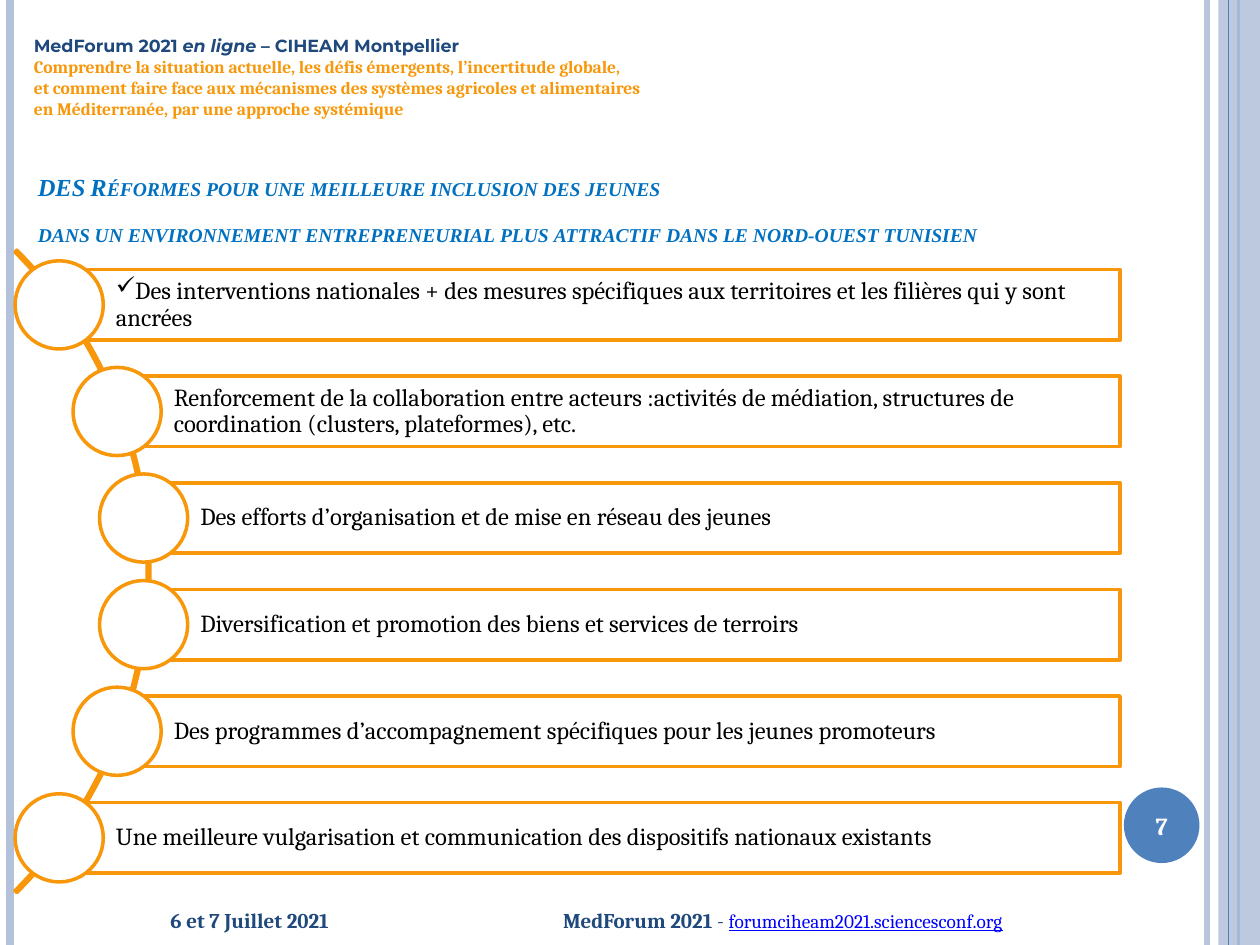
"""Build the MedForum 2021 slide on reforms for the inclusion of young people."""
from dataclasses import dataclass
from typing import Optional

from lxml import etree
from pptx import Presentation
from pptx.dml.color import RGBColor
from pptx.enum import shapes, text
from pptx.oxml.ns import qn
from pptx.util import Inches, Pt

COLORS = {
    "rail": "B3C1DB", "pale_rail": "B8C5DD", "blue": "4F81BD", "navy": "1F497D",
    "orange": "F79709", "title": "0070C0", "link": "0000FF",
    "white": "FFFFFF", "black": "000000",
}
SHAPE = shapes.MSO_SHAPE
MIDDLE = text.MSO_ANCHOR.MIDDLE
FIRST_TOP, PITCH = 2.14, 0.846
BAR_RIGHT, BAR_HEIGHT, NODE_SIZE = 8.89, 0.56, 0.7


@dataclass
class Rail:
    x: float
    color: str
    width: float


@dataclass
class Reform:
    node_left: float
    wording: str
    bullet: Optional[str] = None


RAILS_BELOW = [Rail(9.58, "pale_rail", 3), Rail(0.08, "rail", 4.5), Rail(9.83, "blue", 1.5)]
RAIL_ABOVE = Rail(9.75, "blue", 0.75)
REFORMS = [
    Reform(0.12, "Des interventions nationales + des mesures spécifiques aux territoires "
                 "et les filières qui y sont ancrées", "✓"),
    Reform(0.58, "Renforcement de la collaboration entre acteurs :activités de médiation, "
                 "structures de coordination (clusters, plateformes), etc."),
    Reform(0.79, "Des efforts d’organisation et de mise en réseau des jeunes"),
    Reform(0.79, "Diversification et promotion des biens et services de terroirs"),
    Reform(0.58, "Des programmes d’accompagnement spécifiques pour les jeunes promoteurs"),
    Reform(0.12, "Une meilleure vulgarisation et communication des dispositifs nationaux existants"),
]
TITLE_LINES = [
    "DES Réformes pour une meilleure inclusion des jeunes",
    "dans un environnement entrepreneurial plus attractif dans le nord-ouest tunisien",
]
THEME = ("Comprendre la situation actuelle, les défis émergents, l’incertitude globale,\v"
         "et comment faire face aux mécanismes des systèmes agricoles et alimentaires\v"
         "en Méditerranée, par une approche systémique")


def rgb(name: str) -> RGBColor:
    return RGBColor.from_string(COLORS[name])


def set_font(font, size: float, color: str, face: str = "Cambria", bold: bool = False) -> None:
    font.size, font.name, font.bold = Pt(size), face, bold
    font.color.rgb = rgb(color)


def add_rail(slide, rail: Rail) -> None:
    line = slide.shapes.add_connector(
        shapes.MSO_CONNECTOR.STRAIGHT, Inches(rail.x), 0, Inches(rail.x), Inches(7.5))
    line.line.color.rgb = rgb(rail.color)
    line.line.width = Pt(rail.width)
    etree.SubElement(line._element.spPr, qn("a:effectLst"))


def add_figure(slide, kind, left: float, top: float, width: float, height: float,
               fill: Optional[str] = None, outline: Optional[str] = None):
    figure = slide.shapes.add_shape(
        kind, Inches(left), Inches(top), Inches(width), Inches(height))
    figure.shadow.inherit = False
    if fill:
        figure.fill.solid()
        figure.fill.fore_color.rgb = rgb(fill)
    else:
        figure.fill.background()
    if outline:
        figure.line.color.rgb = rgb(outline)
        figure.line.width = Pt(2)
    else:
        figure.line.fill.background()
    return figure


def add_text_frame(slide, left: float, top: float, width: float, height: float, anchor=None):
    box = slide.shapes.add_textbox(Inches(left), Inches(top), Inches(width), Inches(height))
    box.text_frame.word_wrap = True
    box.text_frame.vertical_anchor = anchor
    return box.text_frame


def add_run(paragraph, wording: str):
    run = paragraph.add_run()
    run.text = wording
    return run


def add_frame(slide) -> None:
    for rail in RAILS_BELOW:
        add_rail(slide, rail)
    band = add_figure(slide, SHAPE.RECTANGLE, 9.67, 0, 0.33, 7.5, "rail")
    band_color = band._element.spPr.find(qn("a:solidFill"))[0]
    etree.SubElement(band_color, qn("a:alpha"), val="87000")
    add_rail(slide, RAIL_ABOVE)

    badge = add_figure(slide, SHAPE.OVAL, 8.92, 6.25, 0.6, 0.6, "blue")
    badge.text_frame.vertical_anchor = MIDDLE
    number = badge.text_frame.paragraphs[0]
    number.text = "7"
    number.alignment = text.PP_ALIGN.CENTER
    set_font(number.font, 14, "white", bold=True)


def add_header_and_footer(slide) -> None:
    header = add_text_frame(slide, 0.17, 0.23, 6.01, 0.77)
    event = header.paragraphs[0]
    set_font(event.font, 10, "navy", "Montserrat", bold=True)
    add_run(event, "MedForum 2021 ")
    add_run(event, "en ligne ").font.italic = True
    add_run(event, "– CIHEAM Montpellier")
    theme = header.add_paragraph()
    theme.text = THEME
    set_font(theme.font, 10, "orange", bold=True)

    date = add_text_frame(slide, 0.51, 7.09, 2.2, 0.42, MIDDLE).paragraphs[0]
    date.text = "6 et 7 Juillet 2021"
    date.alignment = text.PP_ALIGN.RIGHT
    set_font(date.font, 12, "navy", bold=True)

    site = add_text_frame(slide, 4.37, 7.1, 5.15, 0.4, MIDDLE).paragraphs[0]
    set_font(add_run(site, "MedForum 2021 ").font, 12, "navy", bold=True)
    set_font(add_run(site, "- ").font, 12, "navy")
    address = add_run(site, "forumciheam2021.sciencesconf.org")
    set_font(address.font, 11, "link")
    address.font.underline = True


def fill_title(title) -> None:
    title.left, title.top = Inches(0.2), Inches(1.27)
    title.width, title.height = Inches(9.21), Inches(0.73)
    frame = title.text_frame
    frame.word_wrap = True
    frame.auto_size = text.MSO_AUTO_SIZE.NONE
    frame.vertical_anchor = text.MSO_ANCHOR.TOP
    for index, wording in enumerate(TITLE_LINES):
        line = frame.add_paragraph() if index else frame.paragraphs[0]
        run = add_run(line, wording)
        run._r.get_or_add_rPr().set("cap", "small")
        line.alignment = text.PP_ALIGN.JUSTIFY
        line.line_spacing = 1.2
        line.space_before = Pt(3 if index else 0)
        line.space_after = Pt(3)
        set_font(line.font, 14, "title", "Times New Roman", bold=True)
        line.font.italic = True


def add_reform(slide, reform: Reform, top: float) -> None:
    bar_left = reform.node_left + NODE_SIZE / 2
    bar = add_figure(slide, SHAPE.RECTANGLE, bar_left, top, BAR_RIGHT - bar_left, BAR_HEIGHT,
                     outline="orange")
    frame = bar.text_frame
    frame.word_wrap = True
    frame.vertical_anchor = MIDDLE
    frame.margin_left = Inches(0.45)
    frame.margin_top = frame.margin_right = frame.margin_bottom = Inches(0.04)
    measure = frame.paragraphs[0]
    measure.text = reform.wording
    measure.alignment = text.PP_ALIGN.LEFT
    measure.line_spacing = 0.9
    if reform.bullet:
        etree.SubElement(measure._p.get_or_add_pPr(), qn("a:buChar"), char=reform.bullet)
    set_font(measure.font, 14, "black")
    add_figure(slide, SHAPE.OVAL, reform.node_left, top - (NODE_SIZE - BAR_HEIGHT) / 2,
               NODE_SIZE, NODE_SIZE, "white", "orange")


def main() -> None:
    deck = Presentation()
    deck.slide_width, deck.slide_height = Inches(10), Inches(7.5)
    slide = deck.slides.add_slide(deck.slide_layouts[5])
    add_frame(slide)
    add_header_and_footer(slide)
    fill_title(slide.shapes.title)
    arc = add_figure(slide, SHAPE.BLOCK_ARC, -6.02, 0.93, 7.21, 7.21, outline="orange")
    for index, value in enumerate((189, 27, 0.003)):
        arc.adjustments[index] = value
    for row, reform in enumerate(REFORMS):
        add_reform(slide, reform, FIRST_TOP + row * PITCH)
    deck.save("out.pptx")


if __name__ == "__main__":
    main()
